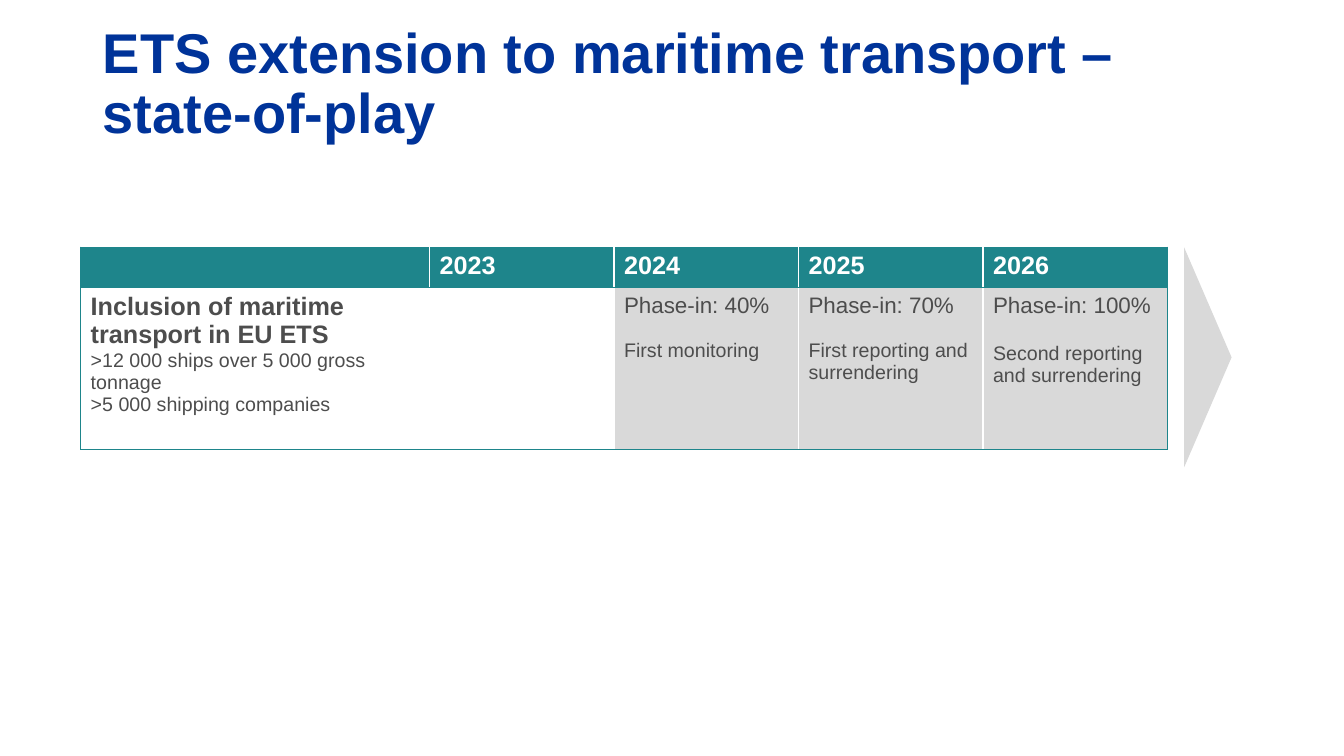
import pptx
import pptx.dml.color
import pptx.enum.shapes
import pptx.enum.text
import pptx.oxml.ns
import pptx.util
from dataclasses import dataclass
from lxml import etree

Inches = pptx.util.Inches
Pt = pptx.util.Pt


@dataclass(frozen=True)
class Theme:
    font: str = "Arial"
    blue: str = "003399"
    teal: str = "1E858B"
    grey: str = "D9D9D9"
    text: str = "4D4D4D"
    white: str = "FFFFFF"
    title: int = 40
    heading: int = 18
    phase: int = 16
    detail: int = 14


THEME = Theme()

YEARS = ["", "2023", "2024", "2025", "2026"]
SCOPE = [
    ("Inclusion of maritime transport in EU ETS", THEME.heading, True, 0),
    (">12 000 ships over 5 000 gross tonnage", THEME.detail, False, 0),
    (">5 000 shipping companies", THEME.detail, False, 0),
]
# Phase-in, milestone, gap between them in points
PHASES = [
    ("Phase-in: 40%", "First monitoring", 16),
    ("Phase-in: 70%", "First reporting and surrendering", 16),
    ("Phase-in: 100%", "Second reporting and surrendering", 18),
]


def rgb(value):
    return pptx.dml.color.RGBColor.from_string(value)


def style(p, size, color, bold):
    p.font.name = THEME.font
    p.font.size = Pt(size)
    p.font.bold = bold
    p.font.color.rgb = rgb(color)


def fill(s, color):
    s.fill.solid()
    s.fill.fore_color.rgb = rgb(color)


def write_cell(cell, lines, color):
    """Write (text, size, bold, space before) lines as paragraphs."""
    tf = cell.text_frame
    for i, (text, size, bold, gap) in enumerate(lines):
        p = tf.add_paragraph() if i else tf.paragraphs[0]
        p.text = text
        if gap:
            p.space_before = Pt(gap)
        style(p, size, color, bold)


def set_borders(cell, left, right):
    """Draw teal lines above and below, and the given colours at the sides."""
    qn = pptx.oxml.ns.qn
    tc_pr = cell._tc.get_or_add_tcPr()
    edges = {"L": left, "R": right, "T": THEME.teal, "B": THEME.teal}
    for edge, color in edges.items():
        width = Pt(0.75) if color == THEME.teal else Pt(1)
        ln = etree.SubElement(tc_pr, qn(f"a:ln{edge}"), w=str(int(width)))
        solid = etree.SubElement(ln, qn("a:solidFill"))
        etree.SubElement(solid, qn("a:srgbClr"), val=color)


def add_title(s, text):
    sp = s.shapes.title
    sp.left, sp.top = Inches(0.92), Inches(0.4)
    sp.width, sp.height = Inches(11.5), Inches(0.89)
    fill(sp, THEME.white)
    tf = sp.text_frame
    tf.word_wrap = True
    tf.auto_size = pptx.enum.text.MSO_AUTO_SIZE.NONE
    tf.vertical_anchor = pptx.enum.text.MSO_ANCHOR.MIDDLE
    p = tf.paragraphs[0]
    p.text = text
    p.alignment = pptx.enum.text.PP_ALIGN.LEFT
    p.line_spacing = 0.9
    style(p, THEME.title, THEME.blue, True)


def add_timeline(s):
    last = len(YEARS) - 1
    table = s.shapes.add_table(
        2, len(YEARS), Inches(0.8), Inches(2.45), Inches(10.78), Inches(2)
    ).table
    table.horz_banding = False
    for i, column in enumerate(table.columns):
        column.width = Inches(1.83 if i else 3.46)
    table.rows[0].height = Inches(0.4)
    table.rows[1].height = Inches(1.6)

    details = [SCOPE, []] + [
        [(phase, THEME.phase, False, 0), (milestone, THEME.detail, False, gap)]
        for phase, milestone, gap in PHASES
    ]
    for i, (year, lines) in enumerate(zip(YEARS, details)):
        head, body = table.cell(0, i), table.cell(1, i)
        for cell in (head, body):
            set_borders(
                cell,
                THEME.white if i else THEME.teal,
                THEME.teal if i == last else THEME.white,
            )
        fill(head, THEME.teal)
        fill(body, THEME.grey if i >= 2 else THEME.white)
        if year:
            write_cell(head, [(year, THEME.heading, True, 0)], THEME.white)
        write_cell(body, lines, THEME.text)


def add_arrowhead(s):
    sp = s.shapes.add_shape(
        pptx.enum.shapes.MSO_SHAPE.ISOSCELES_TRIANGLE,
        Inches(10.89), Inches(3.31), Inches(2.18), Inches(0.47),
    )
    sp.rotation = 90
    sp.shadow.inherit = False
    fill(sp, THEME.grey)
    sp.line.fill.background()


def main():
    prs = pptx.Presentation()
    prs.slide_width, prs.slide_height = Inches(13.33), Inches(7.5)
    s = prs.slides.add_slide(prs.slide_layouts[5])
    add_title(s, "ETS extension to maritime transport – state-of-play")
    add_timeline(s)
    add_arrowhead(s)
    prs.save("out.pptx")


if __name__ == "__main__":
    main()
